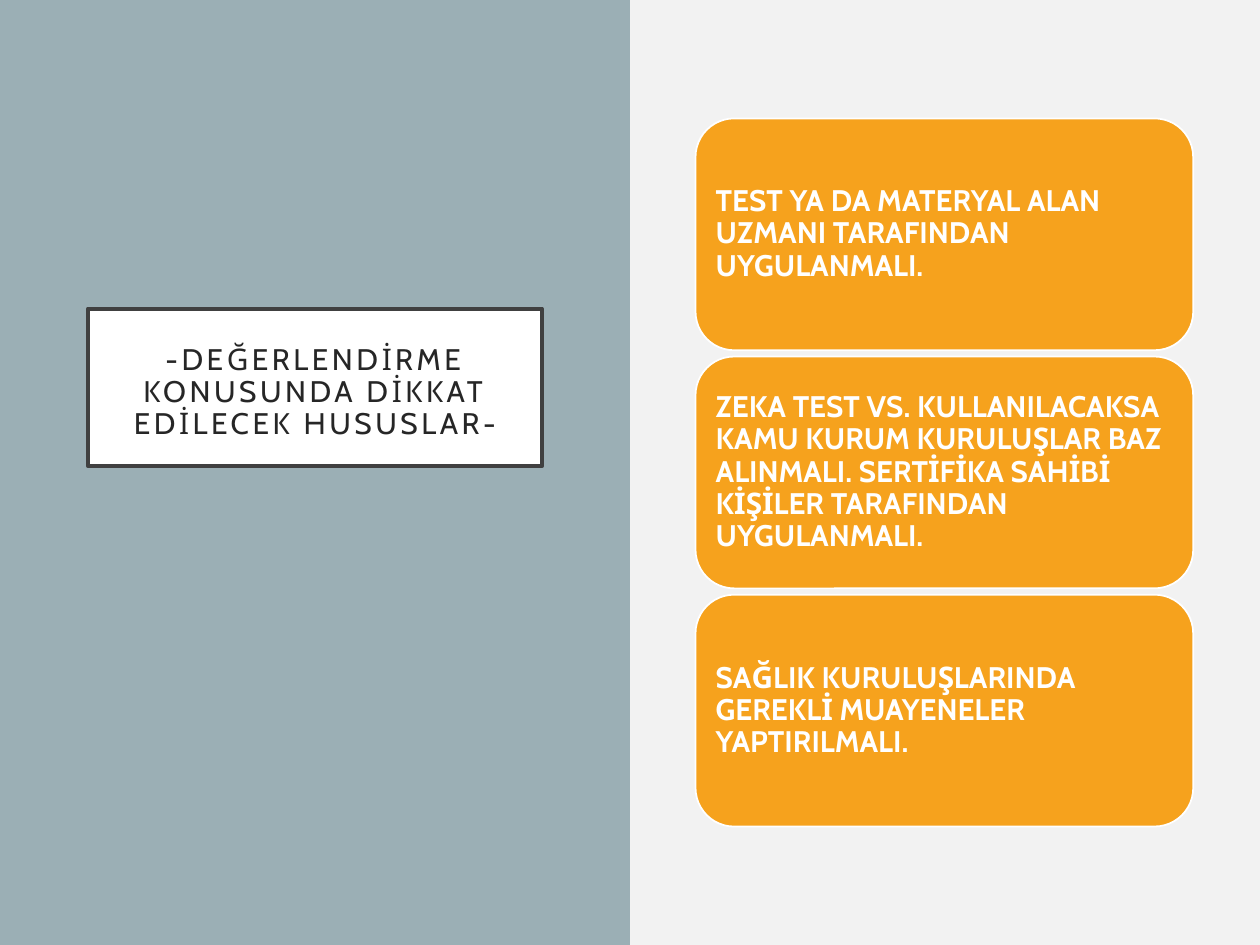
from pptx import Presentation
from pptx import util as u
from pptx.dml.color import RGBColor
from pptx.enum import shapes, text

COLORS = {
    "background": "F2F2F2",
    "panel": "9BAFB5",
    "white": "FFFFFF",
    "frame": "404040",
    "title": "262626",
    "card": "F6A21D",
}
FONT = "Cabin"
TITLE = "-DEĞERLENDİRME KONUSUNDA DİKKAT EDİLECEK HUSUSLAR-"
CARDS = [
    "TEST YA DA MATERYAL ALAN UZMANI TARAFINDAN UYGULANMALI.",
    "ZEKA TEST VS. KULLANILACAKSA KAMU KURUM KURULUŞLAR BAZ ALINMALI. "
    "SERTİFİKA SAHİBİ KİŞİLER TARAFINDAN UYGULANMALI.",
    "SAĞLIK KURULUŞLARINDA GEREKLİ MUAYENELER YAPTIRILMALI.",
]


def rgb(name):
    return RGBColor.from_string(COLORS[name])


def add_box(s, kind, box, fill, line=None, width=1):
    sp = s.shapes.add_shape(kind, *(u.Inches(v) for v in box))
    sp.shadow.inherit = False
    sp.fill.solid()
    sp.fill.fore_color.rgb = rgb(fill)
    if line:
        sp.line.color.rgb = rgb(line)
        sp.line.width = u.Pt(width)
    else:
        sp.line.fill.background()
    return sp


def write(sp, words, color, inset, anchor, align, bold=False):
    """Fill a shape with one wrapped paragraph and return its run."""
    tf = sp.text_frame
    tf.word_wrap = True
    tf.vertical_anchor = anchor
    tf.margin_left = tf.margin_right = u.Inches(inset)
    tf.margin_top = tf.margin_bottom = u.Inches(inset)
    tf.text = words
    p = tf.paragraphs[0]
    p.alignment = align
    p.line_spacing = 0.9
    r = p.runs[0]
    r.font.name = FONT
    r.font.size = u.Pt(17)
    r.font.bold = bold
    r.font.color.rgb = rgb(color)
    return r


def title_panel(s, left, top, width, height):
    rect = shapes.MSO_SHAPE.RECTANGLE
    add_box(s, rect, (left, top, width, height), "panel")
    margin = 0.7
    frame = (left + margin, top + 2.45, width - 2 * margin, 1.25)
    sp = add_box(s, rect, frame, "white", "frame", 2.5)
    r = write(sp, TITLE, "title", 0.2, text.MSO_ANCHOR.BOTTOM, text.PP_ALIGN.CENTER)
    r.font._element.set("spc", "200")


def card_stack(s, left, top, width, height, gap=0.05):
    """Share the height equally among the cards."""
    card_height = (height - gap * (len(CARDS) - 1)) / len(CARDS)
    for i, words in enumerate(CARDS):
        box = (left, top + i * (card_height + gap), width, card_height)
        sp = add_box(s, shapes.MSO_SHAPE.ROUNDED_RECTANGLE, box, "card", "white")
        write(sp, words, "white", 0.07, text.MSO_ANCHOR.MIDDLE,
              text.PP_ALIGN.LEFT, bold=True)


def main():
    prs = Presentation()
    prs.slide_width, prs.slide_height = u.Inches(10), u.Inches(7.5)
    s = prs.slides.add_slide(prs.slide_layouts[6])
    s.background.fill.solid()
    s.background.fill.fore_color.rgb = rgb("background")
    title_panel(s, 0, 0, 5, 7.5)
    card_stack(s, 5.52, 0.94, 3.95, 5.62)
    prs.save("out.pptx")


if __name__ == "__main__":
    main()
